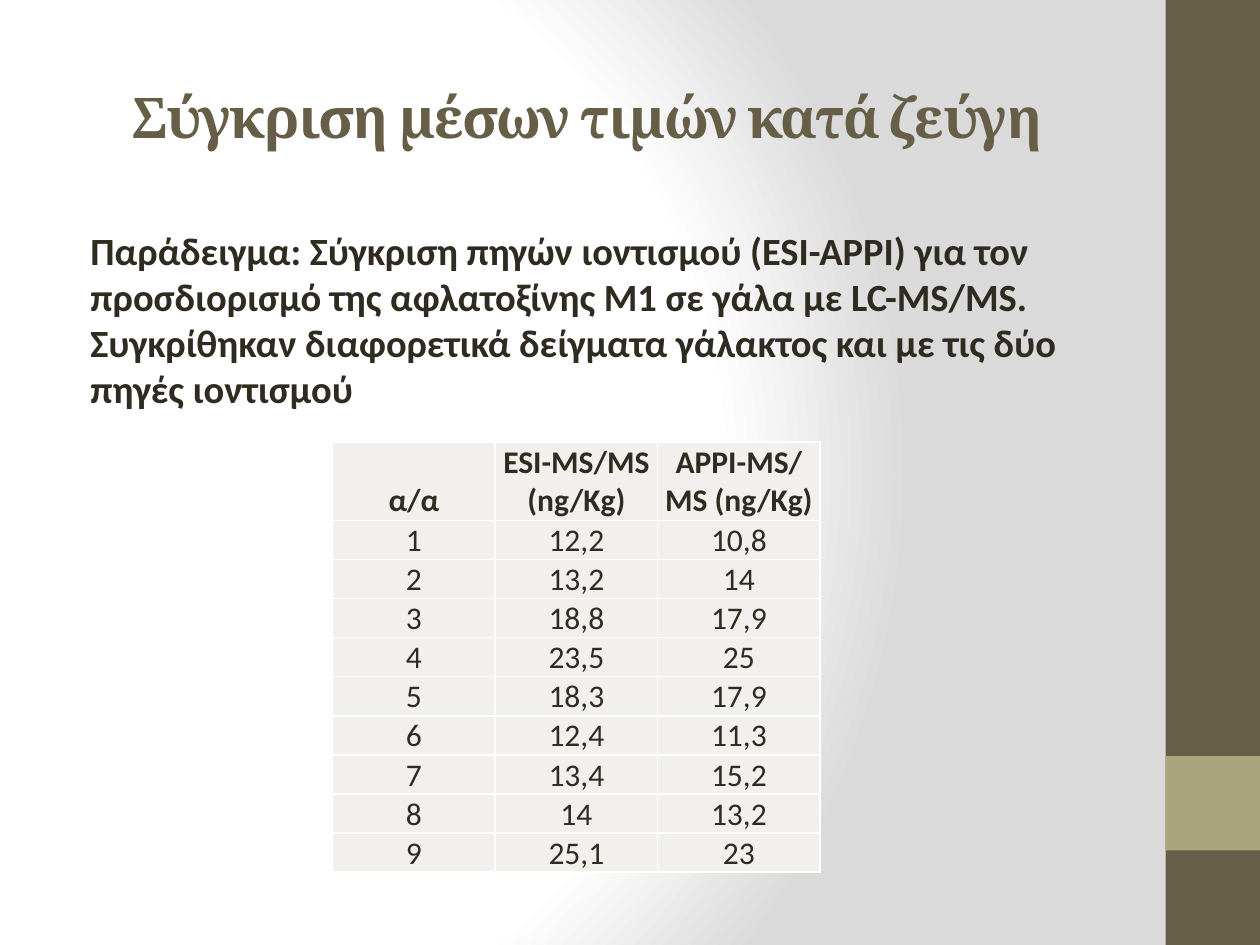
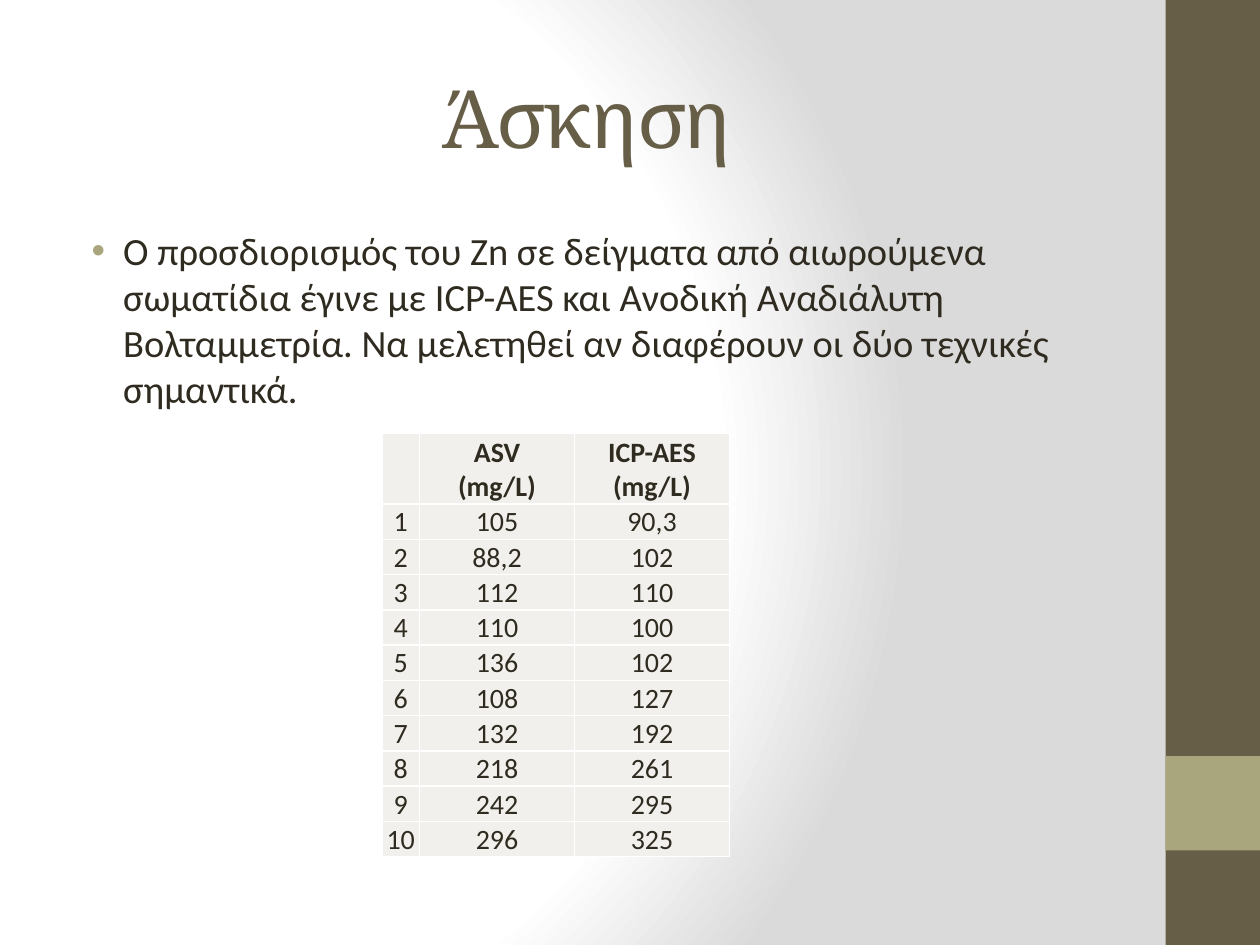
from pptx import Presentation, util as u
from pptx.dml.color import RGBColor
from pptx.enum import shapes, text
from pptx.oxml import parse_xml
from pptx.oxml.ns import nsdecls

# Theme: colours, fonts and type sizes
THEME = {
    "band": "675E47", "accent": "A9A57C", "ink": "2F2B20",
    "cell": "F1F0EC", "white": "FFFFFF", "grey": "DADADA",
    "head_font": "Cambria", "body_font": "Calibri", "body_size": 22,
}
BANDS = [(0, 7.5, "band"), (6, 0.75, "accent")]  # top, height, colour
BORDER = ('<a:{side} {ns} w="12700"><a:solidFill><a:srgbClr val="{color}"/>'
          '</a:solidFill></a:{side}>')

SLIDES = [
    {
        "title": "Σύγκριση μέσων τιμών κατά ζεύγη", "title_size": 32, "bold": True,
        "body": "Παράδειγμα: Σύγκριση πηγών ιοντισμού (ESI-APPI) για τον "
                "προσδιορισμό της αφλατοξίνης Μ1 σε γάλα με LC-MS/MS. "
                "Συγκρίθηκαν διαφορετικά δείγματα γάλακτος και με τις δύο "
                "πηγές ιοντισμού",
        "bullet": False, "indent": (0.12, 0),
        "at": (2.64, 3.51), "cols": (1.29, 1.29, 1.29), "row_height": 0.31,
        "table_size": 18,
        "header": ("α/α", "ESI-MS/MS (ng/Kg)", "APPI-MS/MS (ng/Kg)"),
        "values": [("12,2", "10,8"), ("13,2", "14"), ("18,8", "17,9"),
                   ("23,5", "25"), ("18,3", "17,9"), ("12,4", "11,3"),
                   ("13,4", "15,2"), ("14", "13,2"), ("25,1", "23")],
    },
    {
        "title": "Άσκηση", "title_size": 46, "bold": False,
        "body": "Ο προσδιορισμός του Zn σε δείγματα από αιωρούμενα σωματίδια "
                "έγινε με ICP-AES και Ανοδική Αναδιάλυτη Βολταμμετρία. Να "
                "μελετηθεί αν διαφέρουν οι δύο τεχνικές σημαντικά.",
        "bullet": True, "indent": (0.38, -0.25),
        "at": (3.03, 3.44), "cols": (0.3, 1.23, 1.23), "row_height": 0.28,
        "table_size": 16,
        "header": ("", "ASV\n(mg/L)", "ICP-AES (mg/L)"),
        "values": [("105", "90,3"), ("88,2", "102"), ("112", "110"),
                   ("110", "100"), ("136", "102"), ("108", "127"),
                   ("132", "192"), ("218", "261"), ("242", "295"),
                   ("296", "325")],
    },
]


def write(tf, content, size, font, color, bold, align):
    """Fill a text frame with one paragraph per line of content."""
    tf.word_wrap = True
    tf.text = content
    for p in tf.paragraphs:
        p.alignment = align
        for r in p.runs:
            fmt = {"size": u.Pt(size), "name": THEME[font], "bold": bold}
            for key, value in fmt.items():
                setattr(r.font, key, value)
            r.font.color.rgb = RGBColor.from_string(THEME[color])


def add_text(s, top, height, *style):
    """Add a text box of the shared content width."""
    tf = s.shapes.add_textbox(u.Inches(0.5), u.Inches(top),
                              u.Inches(8.33), u.Inches(height)).text_frame
    write(tf, *style)
    return tf


prs = Presentation()
prs.slide_width, prs.slide_height = u.Inches(10), u.Inches(7.5)

# Radial background, shared through the master
master = prs.slide_master
master.background.fill.solid()
solid = master.element.xpath(".//p:bgPr/a:solidFill")[0]
stops = "".join(
    f'<a:gs pos="{pos * 1000}"><a:srgbClr val="{THEME[color]}"/></a:gs>'
    for pos, color in [(0, "white"), (75, "white"), (100, "grey")])
solid.getparent().replace(solid, parse_xml(
    f'<a:gradFill {nsdecls("a")} rotWithShape="1"><a:gsLst>{stops}</a:gsLst>'
    '<a:path path="circle"><a:fillToRect l="20000" t="50000" r="100000" '
    'b="50000"/></a:path></a:gradFill>'))

for item in SLIDES:
    s = prs.slides.add_slide(prs.slide_layouts[6])

    # Side bands
    for top, height, color in BANDS:
        sp = s.shapes.add_shape(shapes.MSO_SHAPE.RECTANGLE, u.Inches(9.25),
                                u.Inches(top), u.Inches(0.75), u.Inches(height))
        sp.shadow.inherit = False
        sp.fill.solid()
        sp.fill.fore_color.rgb = RGBColor.from_string(THEME[color])
        sp.line.fill.background()

    # Title
    tf = add_text(s, 0.3, 1.25, item["title"], item["title_size"], "head_font",
                  "band", item["bold"], text.PP_ALIGN.CENTER)
    tf.vertical_anchor = text.MSO_ANCHOR.MIDDLE
    tf.paragraphs[0].runs[0].font._element.set("spc", "-100")

    # Body paragraph
    tf = add_text(s, 1.75, 5.25, item["body"], THEME["body_size"], "body_font",
                  "ink", item["bold"], text.PP_ALIGN.LEFT)
    pPr = tf.paragraphs[0]._p.get_or_add_pPr()
    left, first = item["indent"]
    pPr.set("marL", str(u.Inches(left)))
    pPr.set("indent", str(u.Inches(first)))
    if item["bullet"]:
        for xml in (f'<a:buClr {nsdecls("a")}><a:srgbClr val="{THEME["accent"]}"/></a:buClr>',
                    f'<a:buFont {nsdecls("a")} typeface="Arial"/>',
                    f'<a:buChar {nsdecls("a")} char="•"/>'):
            pPr.append(parse_xml(xml))

    # Measurement table: two-line header, then numbered rows
    rows = [item["header"]]
    rows += [(str(n), *pair) for n, pair in enumerate(item["values"], 1)]
    heights = [2 * item["row_height"]] + [item["row_height"]] * len(item["values"])
    left, top = item["at"]
    table = s.shapes.add_table(
        len(rows), len(item["cols"]), u.Inches(left), u.Inches(top),
        u.Inches(sum(item["cols"])), u.Inches(sum(heights))).table
    table.first_row = table.horz_banding = False
    for column, width in zip(table.columns, item["cols"]):
        column.width = u.Inches(width)
    for i, (row, height) in enumerate(zip(rows, heights)):
        table.rows[i].height = u.Inches(height)
        for j, value in enumerate(row):
            cell = table.cell(i, j)
            fmt = {"margin_left": u.Inches(0.01), "margin_right": u.Inches(0.01),
                   "margin_top": u.Inches(0.01), "margin_bottom": 0,
                   "vertical_anchor": text.MSO_ANCHOR.BOTTOM}
            for key, setting in fmt.items():
                setattr(cell, key, setting)
            write(cell.text_frame, value, item["table_size"], "body_font", "ink",
                  i == 0, text.PP_ALIGN.CENTER)
            cell.fill.solid()
            cell.fill.fore_color.rgb = RGBColor.from_string(THEME["cell"])
            tcPr = cell._tc.get_or_add_tcPr()
            for k, side in enumerate(("lnL", "lnR", "lnT", "lnB")):
                tcPr.insert(k, parse_xml(BORDER.format(
                    side=side, ns=nsdecls("a"), color=THEME["white"])))

prs.save("out.pptx")
